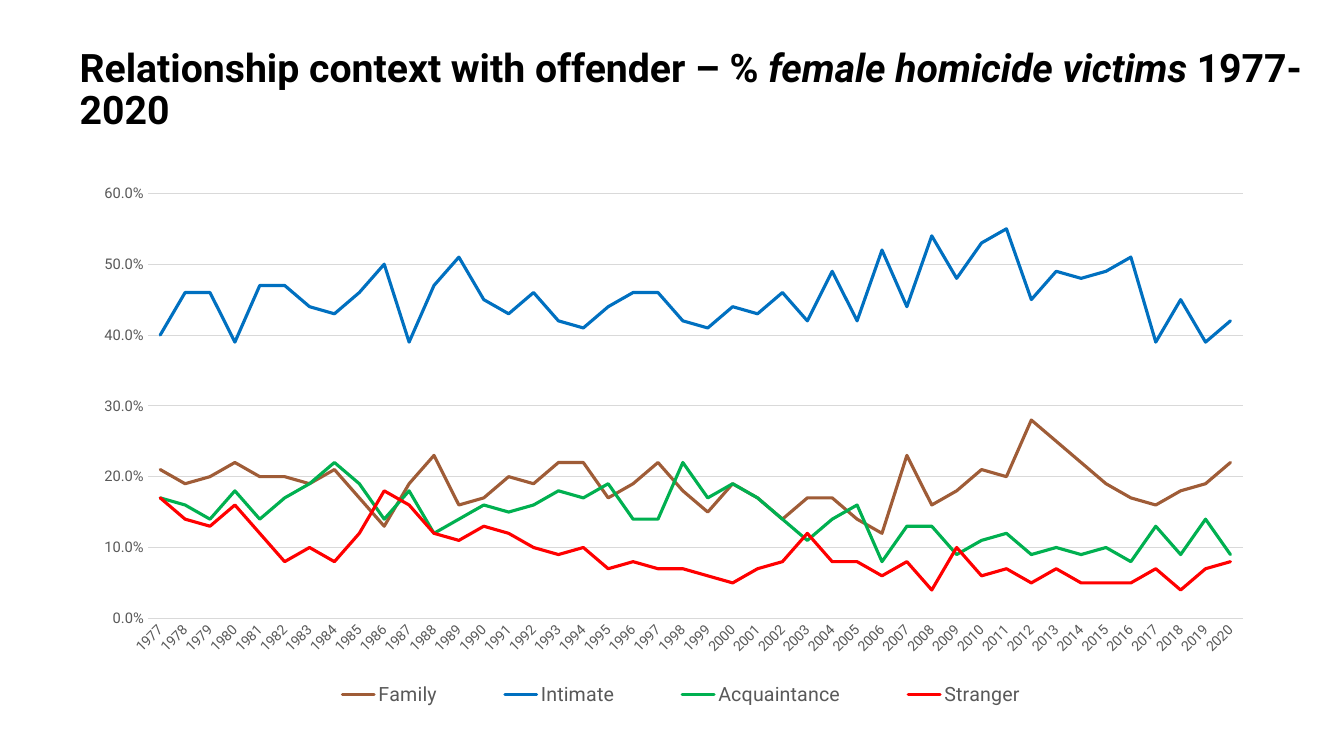
from lxml.etree import SubElement, Element
from pptx import Presentation
from pptx.chart.data import CategoryChartData
from pptx.dml.color import RGBColor
from pptx.enum.chart import XL_CHART_TYPE, XL_LEGEND_POSITION, XL_MARKER_STYLE, XL_TICK_MARK
from pptx.enum.text import MSO_ANCHOR, MSO_AUTO_SIZE, PP_ALIGN
from pptx.oxml.ns import qn
from pptx.util import Inches, Pt

FONT = "Roboto"
HUES = {"text": "000000", "label": "595959", "grid": "D9D9D9",
        "Family": "9F5C37", "Intimate": "0070C0",
        "Acquaintance": "00B050", "Stranger": "FF0000"}

# Title runs: text, italic
TITLE = [("Relationship context with offender – % ", False),
         ("female homicide victims ", True),
         ("1977-2020", False)]

# Share of victims in percent, one value a year
YEARS = range(1977, 2021)
SHARES = {
    "Family": [
        21, 19, 20, 22, 20, 20, 19, 21, 17, 13, 19, 23, 16, 17, 20,
        19, 22, 22, 17, 19, 22, 18, 15, 19, 17, 14, 17, 17, 14, 12,
        23, 16, 18, 21, 20, 28, 25, 22, 19, 17, 16, 18, 19, 22],
    "Intimate": [
        40, 46, 46, 39, 47, 47, 44, 43, 46, 50, 39, 47, 51, 45, 43,
        46, 42, 41, 44, 46, 46, 42, 41, 44, 43, 46, 42, 49, 42, 52,
        44, 54, 48, 53, 55, 45, 49, 48, 49, 51, 39, 45, 39, 42],
    "Acquaintance": [
        17, 16, 14, 18, 14, 17, 19, 22, 19, 14, 18, 12, 14, 16, 15,
        16, 18, 17, 19, 14, 14, 22, 17, 19, 17, 14, 11, 14, 16, 8,
        13, 13, 9, 11, 12, 9, 10, 9, 10, 8, 13, 9, 14, 9],
    "Stranger": [
        17, 14, 13, 16, 12, 8, 10, 8, 12, 18, 16, 12, 11, 13, 12,
        10, 9, 10, 7, 8, 7, 7, 6, 5, 7, 8, 12, 8, 8, 6,
        8, 4, 10, 6, 7, 5, 7, 5, 5, 5, 7, 4, 7, 8],
}

# Places inside the chart, as shares of its size
PLOT = {"layoutTarget": "inner", "xMode": "edge", "yMode": "edge",
        "x": 0.057, "y": 0.029, "w": 0.93, "h": 0.768}
LEGEND = {"xMode": "edge", "yMode": "edge",
          "x": 0.17, "y": 0.9, "w": 0.68, "h": 0.07}


def hue(name):
    return RGBColor.from_string(HUES[name])


def style(font, size, name):
    font.name, font.size = FONT, Pt(size)
    font.color.rgb = hue(name)


def rule(line, name, width):
    line.color.rgb = hue(name)
    line.width = Pt(width)


def place(part, index, spots):
    for old in part.findall(qn("c:layout")):
        part.remove(old)
    layout = Element(qn("c:layout"))
    part.insert(index, layout)
    manual = SubElement(layout, qn("c:manualLayout"))
    for tag, val in spots.items():
        SubElement(manual, qn("c:" + tag)).set("val", str(val))


def add_title(slide):
    title = slide.shapes.title
    title.left, title.top = Inches(0.69), Inches(0.43)
    title.width, title.height = Inches(12.64), Inches(1.5)
    frame = title.text_frame
    frame.word_wrap = True
    frame.auto_size = MSO_AUTO_SIZE.NONE
    frame.vertical_anchor = MSO_ANCHOR.TOP
    para = frame.paragraphs[0]
    para.alignment, para.line_spacing = PP_ALIGN.LEFT, 0.9
    for text, slant in TITLE:
        run = para.add_run()
        run.text = text
        style(run.font, 28, "text")
        run.font.bold, run.font.italic = True, slant


def add_lines(slide):
    data = CategoryChartData(number_format="###0.0%")
    data.categories = [str(year) for year in YEARS]
    for name, vals in SHARES.items():
        data.add_series(name, [val / 100 for val in vals])
    chart = slide.shapes.add_chart(
        XL_CHART_TYPE.LINE, Inches(0.8), Inches(1.76),
        Inches(11.68), Inches(5.49), data).chart
    style(chart.font, 10, "text")
    chart.has_title = False
    place(chart._chartSpace.chart.plotArea, 0, PLOT)

    # Series
    plot = chart.plots[0]
    plot.vary_by_categories = False
    for line in plot.series:
        line.smooth = False
        line.marker.style = XL_MARKER_STYLE.NONE
        rule(line.format.line, line.name, 2.25)
        line.format.line._get_or_add_ln().set("cap", "rnd")

    # Axes
    years, share = chart.category_axis, chart.value_axis
    for axis, size in ((years, 10), (share, 10.5)):
        axis.major_tick_mark = axis.minor_tick_mark = XL_TICK_MARK.NONE
        style(axis.tick_labels.font, size, "label")
    rule(years.format.line, "grid", 0.75)
    years._element.find(qn("c:txPr")).find(qn("a:bodyPr")).set("rot", "-2700000")
    share.minimum_scale, share.maximum_scale, share.major_unit = 0, 0.6, 0.1
    share.tick_labels.number_format = "###0.0%"
    share.tick_labels.number_format_is_linked = False
    share.format.line.fill.background()
    rule(share.major_gridlines.format.line, "grid", 0.75)

    # Legend
    chart.has_legend = True
    legend = chart.legend
    legend.position = XL_LEGEND_POSITION.BOTTOM
    legend.include_in_layout = False
    style(legend.font, 14, "label")
    place(legend._element, 1, LEGEND)


def main():
    deck = Presentation()
    deck.slide_width, deck.slide_height = Inches(13.33), Inches(7.5)
    slide = deck.slides.add_slide(deck.slide_layouts[5])
    add_title(slide)
    add_lines(slide)
    deck.save("out.pptx")


if __name__ == "__main__":
    main()
